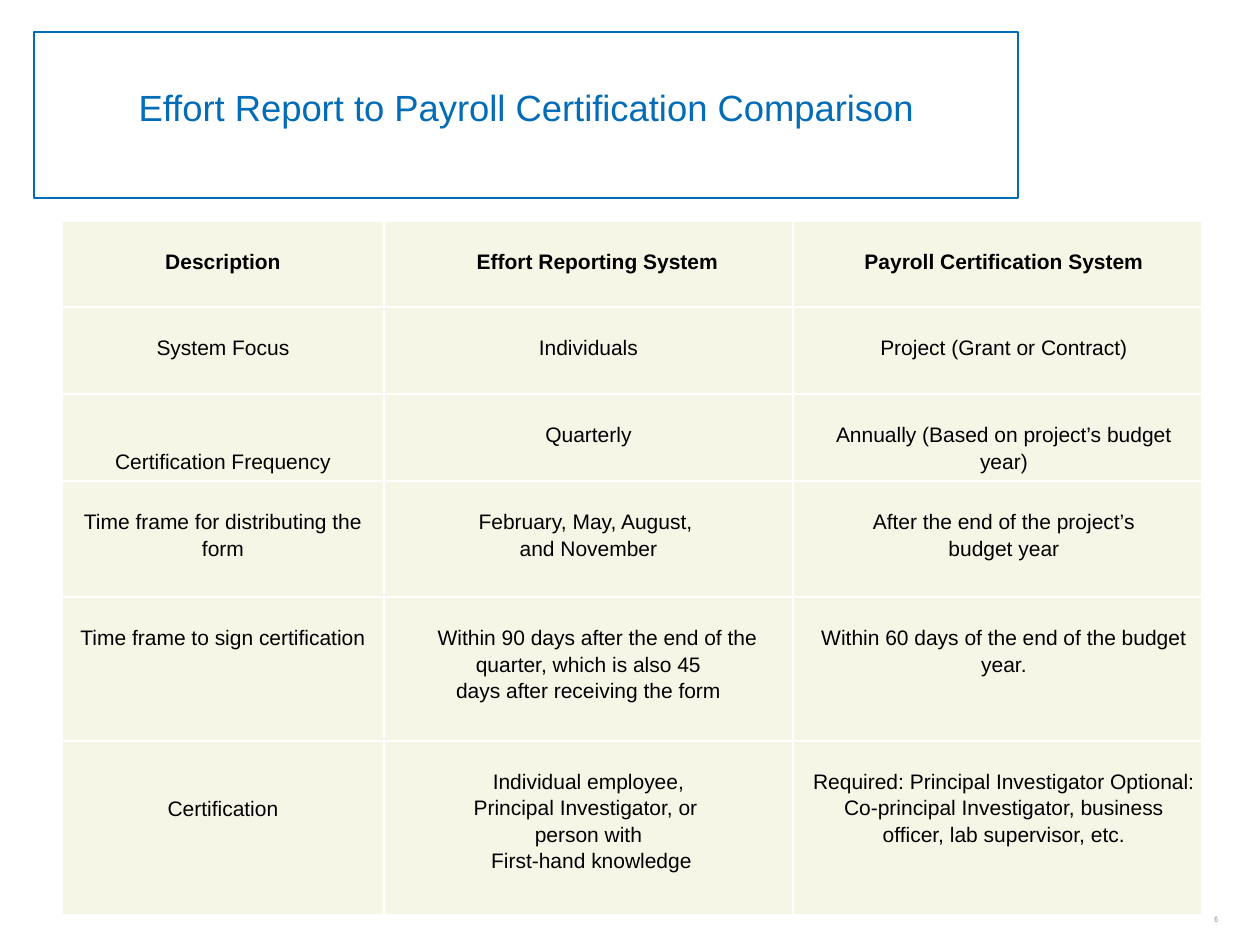
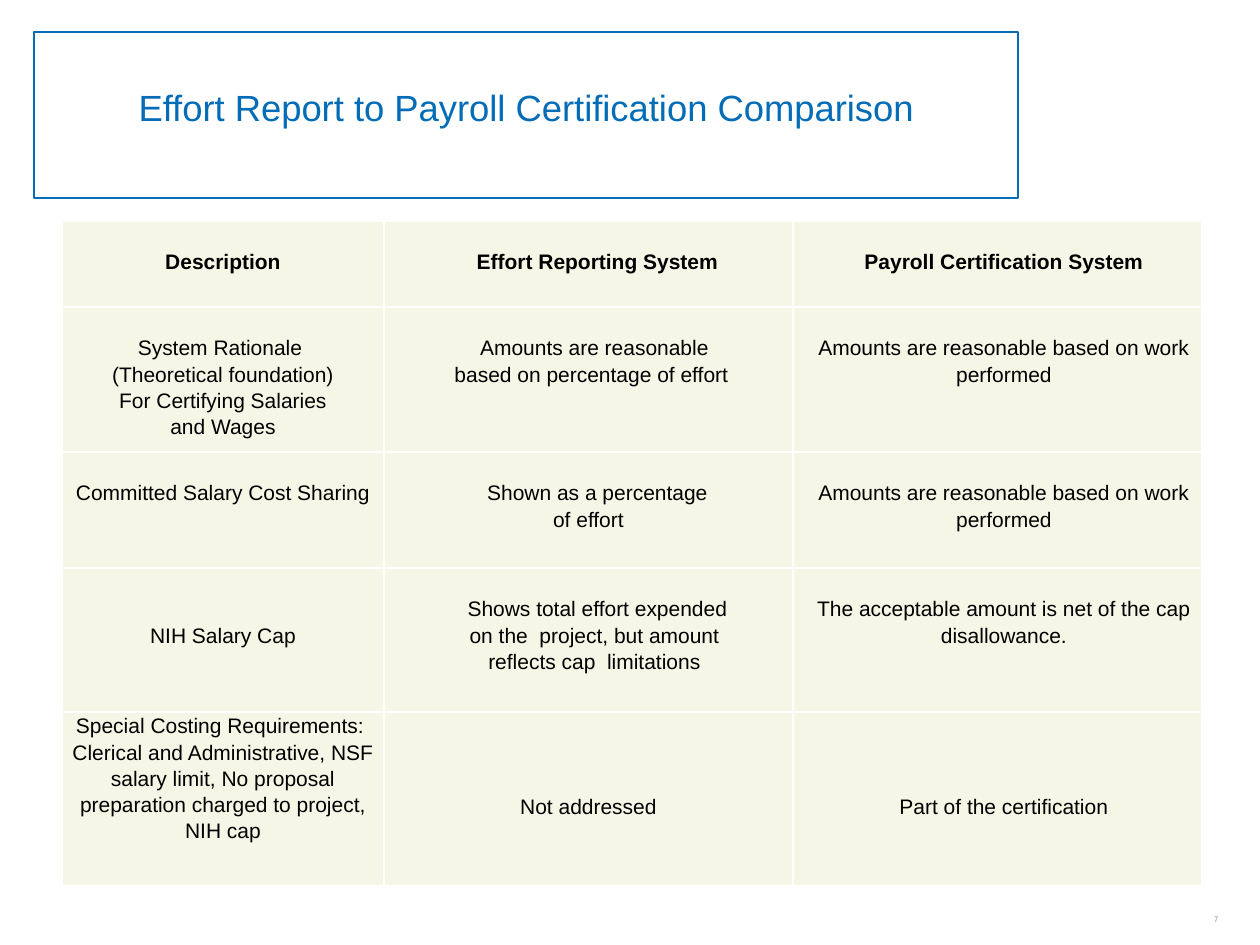
from lxml import etree
from pptx import Presentation
from pptx.dml.color import RGBColor
from pptx.enum.shapes import MSO_SHAPE as Shape
from pptx.enum.text import MSO_ANCHOR as Anchor, PP_ALIGN as Align
from pptx.oxml.ns import qn
from pptx.util import Pt

TITLE = "Effort Report to Payroll Certification Comparison"
HEADINGS = (86, ["Description", "Effort Reporting System", "Payroll Certification System"])

# Each page: its number and its rows as (height, cell texts)
PAGES = [
    ("6", [
        HEADINGS,
        (87, ["System Focus", "Individuals", "Project (Grant or Contract)"]),
        (87, ["Certification Frequency", "Quarterly",
              "Annually (Based on project’s budget year)"]),
        (116, ["Time frame for distributing the form",
               "February, May, August, \nand November",
               "After the end of the project’s\nbudget year"]),
        (144, ["Time frame to sign certification",
               "Within 90 days after the end of the quarter, which is also 45\n"
               "days after receiving the form",
               "Within 60 days of the end of the budget year."]),
        (174, ["Certification",
               "Individual employee,\nPrincipal Investigator, or \nperson with\n"
               "First-hand knowledge",
               "Required: Principal Investigator Optional: Co-principal Investigator, "
               "business officer, lab supervisor, etc."]),
    ]),
    ("7", [
        HEADINGS,
        (145, ["System Rationale \n(Theoretical foundation)\nFor Certifying Salaries\nand Wages",
               "Amounts are reasonable\nbased on percentage of effort",
               "Amounts are reasonable based on work performed"]),
        (116, ["Committed Salary Cost Sharing",
               "Shown as a percentage\nof effort",
               "Amounts are reasonable based on work performed"]),
        (144, ["NIH Salary Cap",
               "Shows total effort expended\non the  project, but amount\nreflects cap  limitations",
               "The acceptable amount is net of the cap disallowance."]),
        (174, ["Special Costing Requirements:  Clerical and Administrative, NSF salary limit, "
               "No proposal preparation charged to project, NIH cap",
               "Not addressed", "Part of the certification"]),
    ]),
]

# Lines left free above a cell's text, where it is not one
LINES_ABOVE = {"Certification": 2, "NIH Salary Cap": 2, "Special Costing": 0,
               "Not addressed": 3, "Part of the certification": 3}
# First-line indents in px, by the start of the paragraph
INDENTS = {"Effort Reporting": 18, "Within 90": 18, "Shown as": 18, "Shows total": 18,
           "Amounts are reasonable": 12, "on the": 12, "reflects cap": 12,
           "First-hand": 6, "based on": 6}

COLORS = {"blue": "036CB6", "cream": "F6F6E7", "white": "FFFFFF",
          "black": "000000", "gray": "808080"}
TITLE_FONT = {"name": "Arial", "size": Pt(20.8), "color": "blue"}
CELL_FONT = {"name": "Arial", "size": Pt(12), "color": "black", "bold": False}
HEADING_FONT = CELL_FONT | {"bold": True}
NUMBER_FONT = {"name": "Arial Narrow", "size": Pt(4.6), "color": "gray"}

TITLE_BOX = (34, 32, 984, 166)
NUMBER_BOX = (1202, 900, 40, 39)
TABLE_LEFT, TABLE_TOP = 62, 221
COLUMNS = [322, 409, 409]
LINE = 27
LINE_SPACING = 1.12
CELL_SIDE, LAST_COLUMN_SIDE = 5, 18


def px(length):
    return round(length * 914400 / 126)


def rgb(color):
    return RGBColor.from_string(COLORS[color])


def style(font, values):
    for key, value in values.items():
        if key == "color":
            font.color.rgb = rgb(value)
        else:
            setattr(font, key, value)


def add_title(slide):
    box = slide.shapes.add_shape(Shape.RECTANGLE, *map(px, TITLE_BOX))
    box.shadow.inherit = False
    box.fill.background()
    box.line.color.rgb = rgb("blue")
    box.line.width = Pt(0.75)
    frame = box.text_frame
    frame.word_wrap = True
    frame.vertical_anchor = Anchor.TOP
    frame.margin_top = px(53)
    paragraph = frame.paragraphs[0]
    paragraph.text = TITLE
    paragraph.alignment = Align.CENTER
    style(paragraph.font, TITLE_FONT)


def add_page_number(slide, number):
    frame = slide.shapes.add_textbox(*map(px, NUMBER_BOX)).text_frame
    frame.word_wrap = True
    frame.vertical_anchor = Anchor.MIDDLE
    frame.paragraphs[0].text = number
    style(frame.paragraphs[0].font, NUMBER_FONT)


def add_borders(cell):
    properties = cell._tc.get_or_add_tcPr()
    for side in ("lnL", "lnR", "lnT", "lnB"):
        border = etree.SubElement(properties, qn(f"a:{side}"), w=str(Pt(1)))
        fill = etree.SubElement(border, qn("a:solidFill"))
        etree.SubElement(fill, qn("a:srgbClr"), val=COLORS["white"])


def by_start(text, values, default):
    """Value whose key is the whole text or, for a longer text, its beginning."""
    if text in values:
        return values[text]
    return next((v for key, v in values.items() if text.startswith(key + " ")), default)


def fill_cell(cell, text, font, is_middle, is_last):
    add_borders(cell)
    cell.fill.solid()
    cell.fill.fore_color.rgb = rgb("cream")
    margins = {"margin_left": LAST_COLUMN_SIDE if is_last else CELL_SIDE,
               "margin_right": CELL_SIDE, "margin_bottom": 0,
               "margin_top": LINE * by_start(text, LINES_ABOVE, 1)}
    for side, length in margins.items():
        setattr(cell, side, px(length))
    cell.vertical_anchor = Anchor.TOP
    cell.text = text
    for paragraph in cell.text_frame.paragraphs:
        paragraph.alignment = Align.CENTER
        paragraph.line_spacing = LINE_SPACING
        indent = by_start(paragraph.text, INDENTS, 0) if is_middle else 0
        if indent:
            paragraph._p.get_or_add_pPr().set("indent", str(px(indent)))
        style(paragraph.font, font)


def add_comparison(slide, rows):
    size = (sum(COLUMNS), sum(height for height, _ in rows))
    table = slide.shapes.add_table(
        len(rows), len(COLUMNS), *map(px, (TABLE_LEFT, TABLE_TOP, *size))).table
    table.horz_banding = False
    for column, width in zip(table.columns, COLUMNS):
        column.width = px(width)
    for r, (height, texts) in enumerate(rows):
        table.rows[r].height = px(height)
        font = CELL_FONT if r else HEADING_FONT
        for c, text in enumerate(texts):
            fill_cell(table.cell(r, c), text, font, c == 1, c == 2)


def main():
    deck = Presentation()
    deck.slide_width, deck.slide_height = px(1260), px(945)
    for number, rows in PAGES:
        slide = deck.slides.add_slide(deck.slide_layouts[6])
        add_page_number(slide, number)
        add_title(slide)
        add_comparison(slide, rows)
    deck.save("out.pptx")


if __name__ == "__main__":
    main()
